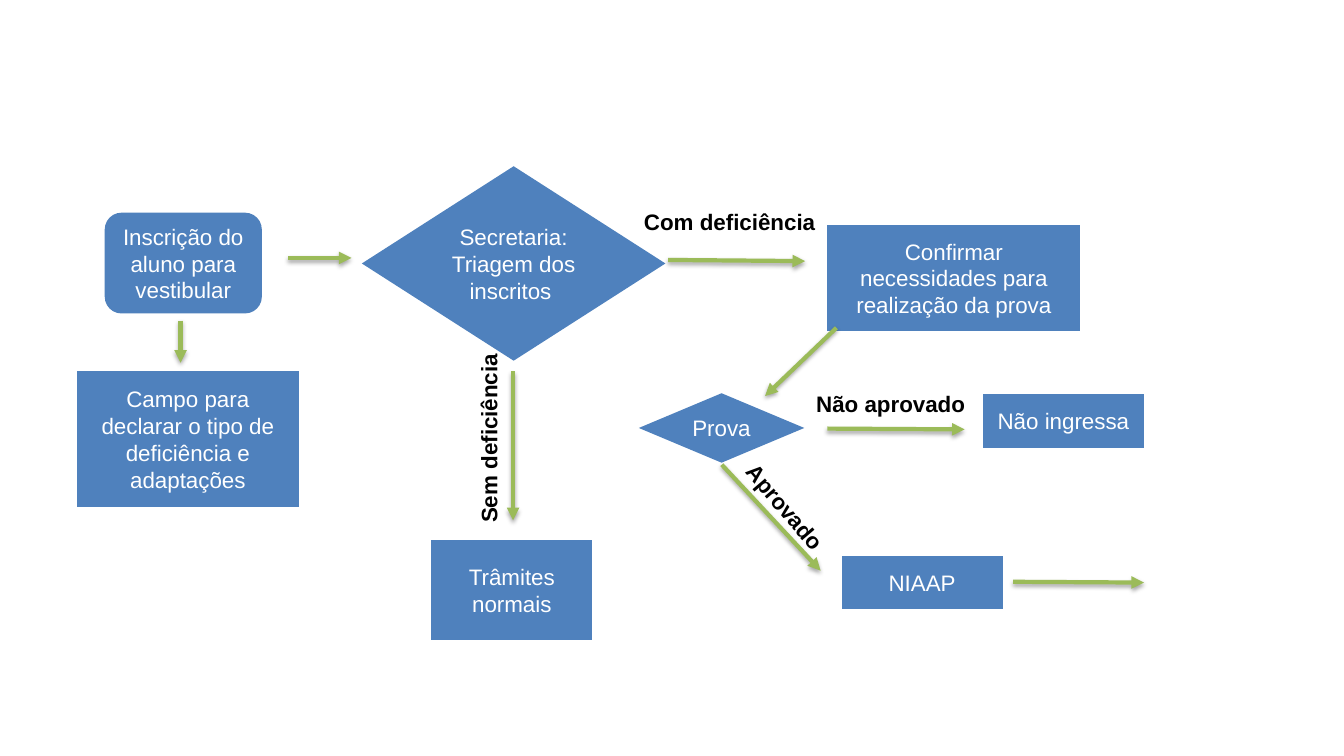
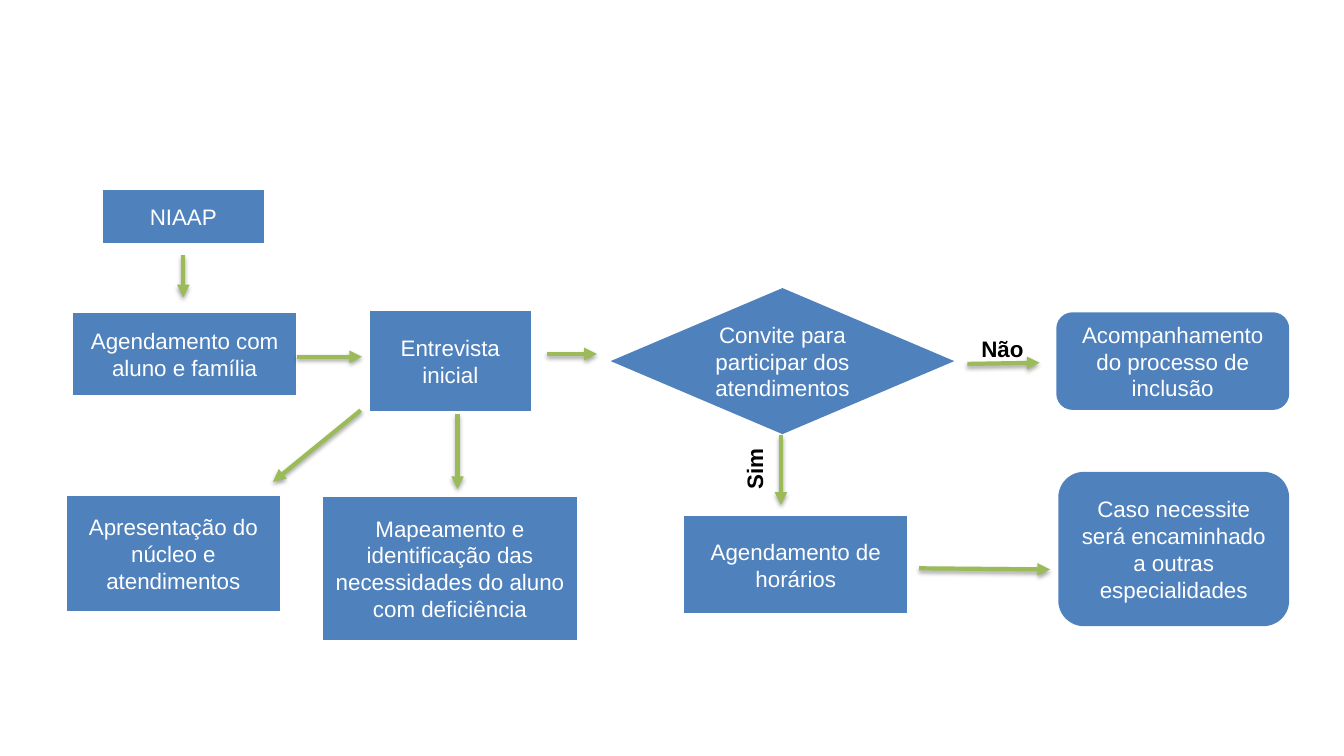
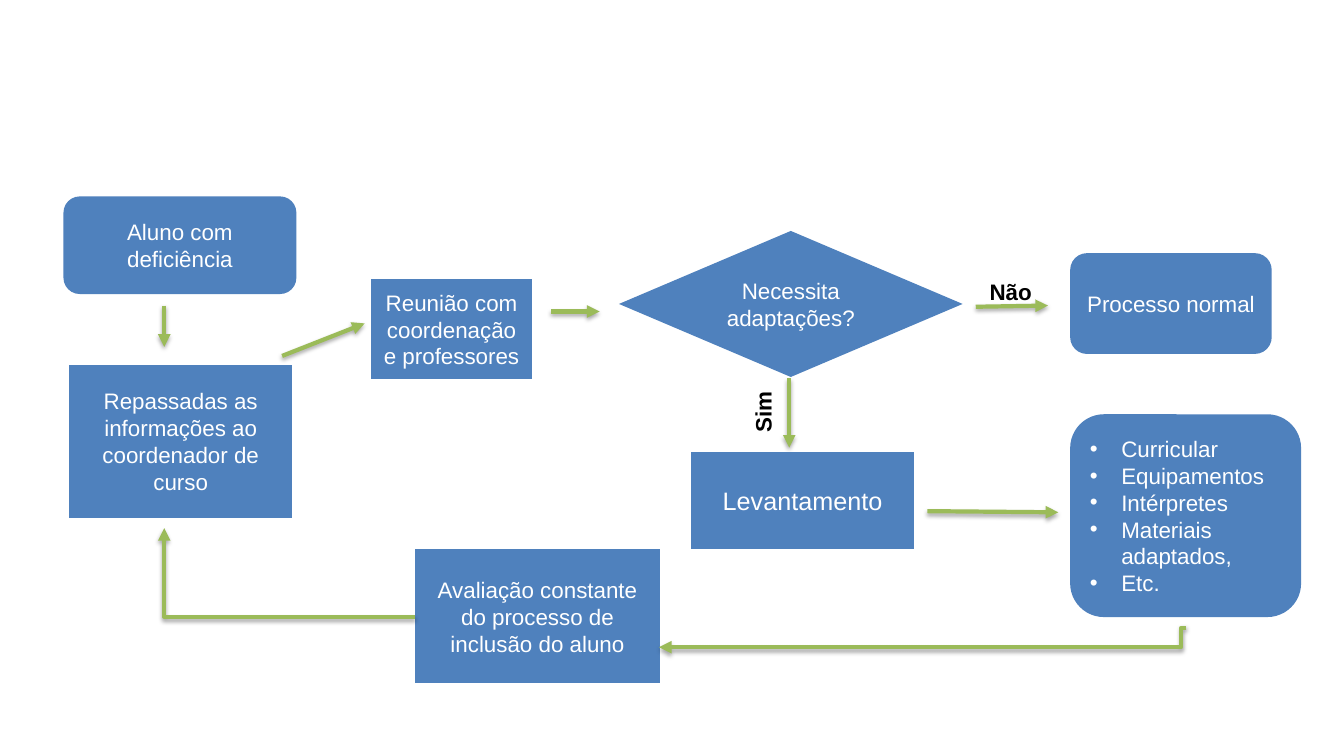
from dataclasses import dataclass

from lxml.etree import SubElement
from pptx import Presentation
from pptx.dml.color import RGBColor
from pptx.enum.shapes import MSO_CONNECTOR, MSO_SHAPE
from pptx.enum.text import MSO_ANCHOR, MSO_AUTO_SIZE, PP_ALIGN
from pptx.oxml.ns import qn
from pptx.util import Cm, Pt

COLORS = {"step": "4F81BD", "arrow": "9BBB59", "light": "FFFFFF", "dark": "000000"}
FONT = "Arial"
PROCESS = MSO_SHAPE.FLOWCHART_PROCESS
ROUNDED = MSO_SHAPE.FLOWCHART_ALTERNATE_PROCESS
DECISION = MSO_SHAPE.FLOWCHART_DECISION
SMALL, MEDIUM, WIDE = (4.06, 1.35), (4.06, 2.51), (5.61, 2.46)
TERMINAL, QUESTION = (5.87, 2.46), (8.66, 3.68)
LONG_LABEL, SHORT_LABEL, LABEL_HEIGHT = 5.33, 3.91, 0.94


@dataclass
class Box:
    """A region of a slide, in centimetres."""

    left: float
    top: float
    width: float
    height: float

    def point(self, x, y):
        """Return a point of the region as slide lengths."""
        return Cm(self.left + x), Cm(self.top + y)

    def inner(self, x, y, width, height):
        """Return a region placed inside this one."""
        return Box(self.left + x, self.top + y, width, height)


def write_text(shape, text, color="light", size=16, bold=False,
               align=PP_ALIGN.CENTER, bullet=None):
    """Write each line of the text as one formatted paragraph."""
    frame = shape.text_frame
    frame.word_wrap = True
    for index, line in enumerate(text.split("\n")):
        paragraph = frame.add_paragraph() if index else frame.paragraphs[0]
        paragraph.alignment = align
        if bullet:
            properties = paragraph._p.get_or_add_pPr()
            properties.set("marL", str(Cm(0.79)))
            properties.set("indent", str(-Cm(0.79)))
            SubElement(properties, qn("a:buFont"), typeface=FONT)
            SubElement(properties, qn("a:buChar"), char=bullet)
        run = paragraph.add_run()
        run.text = line
        run.font.name = FONT
        run.font.size = Pt(size)
        run.font.bold = bold
        run.font.color.rgb = RGBColor.from_string(COLORS[color])


def add_step(slide, box, kind, position, extent, text, **text_format):
    """Add one filled step of the flow."""
    shape = slide.shapes.add_shape(kind, *box.point(*position), *map(Cm, extent))
    shape.shadow.inherit = False
    shape.fill.solid()
    shape.fill.fore_color.rgb = RGBColor.from_string(COLORS["step"])
    shape.line.fill.background()
    shape.text_frame.vertical_anchor = MSO_ANCHOR.MIDDLE
    write_text(shape, text, **text_format)


def add_label(slide, box, position, width, text, rotation=0):
    """Add a bold label that names a branch."""
    label = slide.shapes.add_textbox(
        *box.point(*position), Cm(width), Cm(LABEL_HEIGHT))
    label.rotation = rotation
    write_text(label, text, color="dark", bold=True, align=PP_ALIGN.LEFT)
    label.text_frame.auto_size = MSO_AUTO_SIZE.SHAPE_TO_FIT_TEXT


def add_arrow(slide, box, start, end, bend=None):
    """Add a shadowed arrow, with an elbow at the bend fraction if given."""
    kind = MSO_CONNECTOR.STRAIGHT if bend is None else MSO_CONNECTOR.ELBOW
    arrow = slide.shapes.add_connector(kind, *box.point(*start), *box.point(*end))
    arrow.line.width = Pt(3)
    arrow.line.color.rgb = RGBColor.from_string(COLORS["arrow"])
    properties = arrow._element.spPr
    SubElement(properties.find(qn("a:ln")), qn("a:tailEnd"), type="triangle")
    effects = SubElement(properties, qn("a:effectLst"))
    shadow = SubElement(
        effects, qn("a:outerShdw"), blurRad=str(Pt(3.1)), dist=str(Pt(1.8)),
        dir="5400000", rotWithShape="0")
    color = SubElement(shadow, qn("a:srgbClr"), val=COLORS["dark"])
    SubElement(color, qn("a:alpha"), val="35000")
    if bend is not None:
        geometry = properties.find(qn("a:prstGeom"))
        adjustments = geometry.find(qn("a:avLst"))
        if adjustments is None:
            adjustments = SubElement(geometry, qn("a:avLst"))
        SubElement(adjustments, qn("a:gd"), name="adj1",
                   fmla=f"val {round(bend * 100000)}")


def add_flow(slide, box, steps, arrows, labels=()):
    """Add the steps, arrows and labels of one flow."""
    for step in steps:
        add_step(slide, box, *step)
    for arrow in arrows:
        add_arrow(slide, box, *arrow)
    for label in labels:
        add_label(slide, box, *label)


def add_branch(slide, box, question):
    """Add a yes-or-no question with its outgoing arrows."""
    add_flow(
        slide, box,
        steps=[(DECISION, (0, 0), QUESTION, question)],
        arrows=[
            ((8.99, 1.91), (10.81, 1.88)),
            ((4.29, 3.71), (4.29, 5.46)),
            ((7.77, 7.06), (11.07, 7.09)),
        ],
        labels=[
            ((9.09, 1.07), LONG_LABEL, "Não"),
            ((1.67, 2.9), SHORT_LABEL, "Sim", 270),
        ])


def fill_admission(slide, box):
    """Draw the flow from enrolment to the exam result."""
    add_flow(
        slide, box,
        steps=[
            (ROUNDED, (1.14, 1.36), (3.96, 2.54),
             "Inscrição do aluno para vestibular"),
            (PROCESS, (0.43, 5.35), (5.61, 3.43),
             "Campo para declarar o tipo de deficiência e adaptações"),
            (DECISION, (7.62, 0.19), (7.65, 4.9),
             "Secretaria: Triagem dos inscritos "),
            (PROCESS, (19.35, 1.66), (6.38, 2.69),
             "Confirmar necessidades para realização da prova"),
            (PROCESS, (9.37, 9.61), MEDIUM, "Trâmites normais"),
            (DECISION, (14.6, 5.91), (4.17, 1.75), "Prova"),
            (PROCESS, (23.27, 5.93), SMALL, "Não ingressa"),
            (PROCESS, (19.71, 10), SMALL, "NIAAP"),
        ],
        arrows=[
            ((3.05, 4.08), (3.05, 5.14)),
            ((5.76, 2.5), (7.36, 2.5)),
            ((11.43, 5.35), (11.43, 9.11)),
            ((15.34, 2.55), (18.79, 2.58)),
            ((19.58, 4.26), (17.78, 5.98)),
            ((19.35, 6.8), (22.81, 6.82)),
            ((16.69, 7.71), (19.18, 10.38)),
            ((24.03, 10.66), (27.33, 10.68)),
        ],
        labels=[
            ((14.48, 1.11), LONG_LABEL, "Com deficiência"),
            ((8.15, 6.29), LONG_LABEL, "Sem deficiência", 270),
            ((18.82, 5.7), LONG_LABEL, "Não aprovado"),
            ((16.58, 8.6), SHORT_LABEL, "Aprovado", 49.6),
        ])


def fill_interview(slide, box):
    """Draw the flow from the first interview to the follow-up."""
    add_flow(
        slide, box,
        steps=[
            (PROCESS, (1.09, 0.78), SMALL, "NIAAP"),
            (PROCESS, (0.35, 3.9), (5.61, 2.06), "Agendamento com aluno e família"),
            (PROCESS, (7.82, 3.85), MEDIUM, "Entrevista inicial"),
            (PROCESS, (0.18, 8.5), (5.38, 2.9),
             "Apresentação do núcleo e atendimentos"),
            (PROCESS, (6.65, 8.52), (6.38, 3.61),
             "Mapeamento e identificação das necessidades do aluno com deficiência"),
            (PROCESS, (15.75, 9), WIDE, "Agendamento de horários"),
            (ROUNDED, (25.12, 3.87), TERMINAL,
             "Acompanhamento do processo de inclusão"),
            (ROUNDED, (25.17, 7.89), (5.82, 3.89),
             "Caso necessite será encaminhado a outras especialidades"),
        ],
        arrows=[
            ((3.12, 2.43), (3.12, 3.49)),
            ((5.99, 4.99), (7.62, 4.99)),
            ((7.59, 6.34), (5.38, 8.14)),
            ((10.03, 6.44), (10.03, 8.32)),
            ((12.29, 4.92), (13.54, 4.92)),
        ])
    add_branch(slide, box.inner(13.89, 3.26, 11.07, 7.09),
               "Convite para participar dos atendimentos")


def fill_support(slide, box):
    """Draw the cycle of adaptations and evaluation."""
    add_flow(
        slide, box,
        steps=[
            (ROUNDED, (0.1, 0.95), TERMINAL, "Aluno com deficiência"),
            (PROCESS, (0.25, 5.19), (5.61, 3.86),
             "Repassadas as informações ao coordenador de curso"),
            (PROCESS, (7.85, 3.04), MEDIUM,
             "Reunião com coordenação e professores "),
            (PROCESS, (8.96, 9.84), (6.17, 3.38),
             "Avaliação constante do processo de inclusão do aluno"),
            (MSO_SHAPE.ROUNDED_RECTANGLE, (25.47, 2.38), (5.08, 2.54),
             "Processo normal"),
        ],
        arrows=[
            ((2.64, 3.7), (2.64, 4.74)),
            ((5.61, 4.97), (7.69, 4.15)),
            ((12.39, 3.85), (13.61, 3.85)),
            ((28.4, 11.82), (15.11, 12.31), 0.01),
            ((8.96, 11.54), (2.64, 9.31), 1),
        ])
    add_branch(slide, box.inner(14.1, 1.82, 11.07, 7.09), "Necessita adaptações?")
    add_step(slide, box, PROCESS, (15.92, 7.38), WIDE, "Levantamento", size=18)
    add_step(slide, box, ROUNDED, (25.47, 6.44), (5.82, 5.11),
             "Curricular\nEquipamentos\nIntérpretes\nMateriais adaptados,\nEtc.",
             align=PP_ALIGN.LEFT, bullet="•")


def main():
    """Build and save the presentation."""
    presentation = Presentation()
    presentation.slide_width = Cm(33.87)
    presentation.slide_height = Cm(19.05)
    box = Box(1.5, 4, 31.5, 13.5)
    for fill_slide in (fill_admission, fill_interview, fill_support):
        slide = presentation.slides.add_slide(presentation.slide_layouts[6])
        fill_slide(slide, box)
    presentation.save("out.pptx")


if __name__ == "__main__":
    main()
